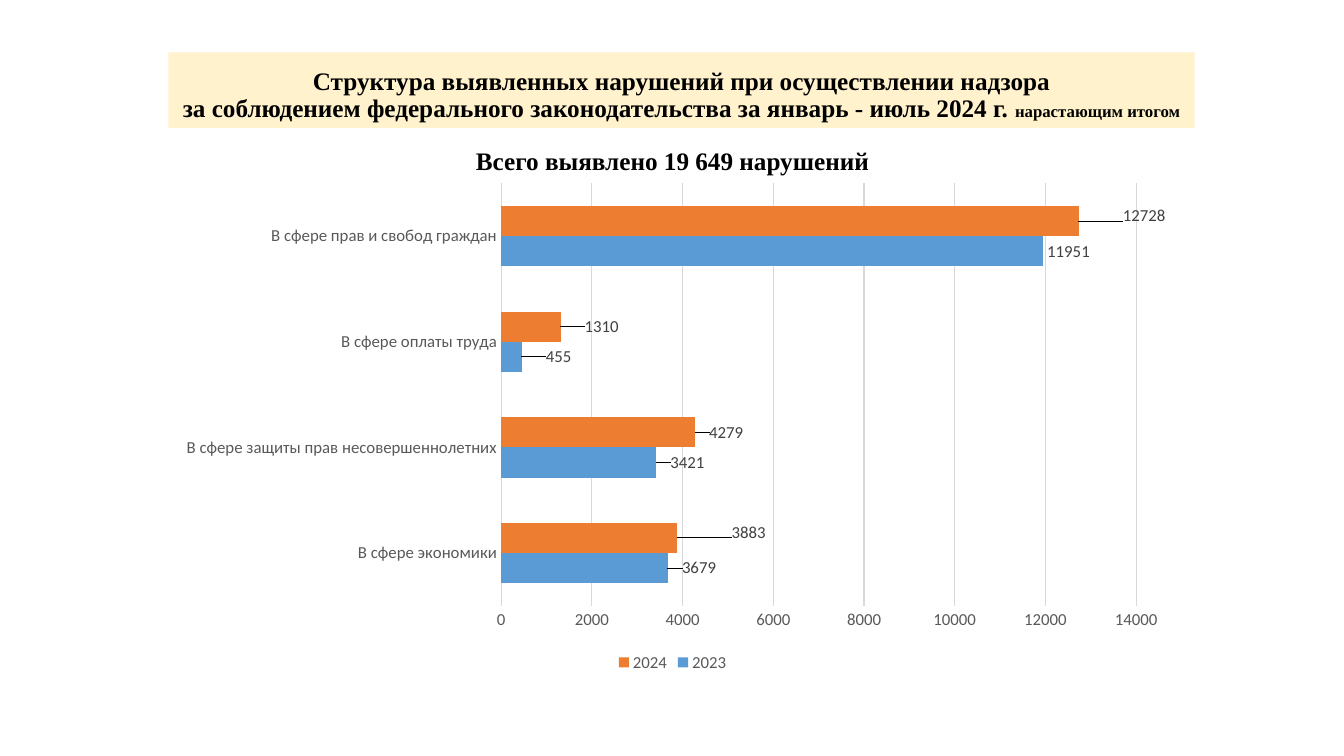
from dataclasses import dataclass

from lxml import etree
from pptx import Presentation
from pptx.chart.data import CategoryChartData
from pptx.dml.color import RGBColor
from pptx.enum.chart import (XL_CHART_TYPE, XL_LABEL_POSITION,
                             XL_LEGEND_POSITION, XL_TICK_MARK)
from pptx.enum.text import MSO_ANCHOR, PP_ALIGN
from pptx.oxml.ns import qn
from pptx.util import Inches, Pt

BARS = XL_CHART_TYPE.BAR_CLUSTERED
OUTSIDE_END = XL_LABEL_POSITION.OUTSIDE_END
LEGEND_BOTTOM = XL_LEGEND_POSITION.BOTTOM
NO_TICKS = XL_TICK_MARK.NONE
TOP, BOTTOM = MSO_ANCHOR.TOP, MSO_ANCHOR.BOTTOM
CENTER = PP_ALIGN.CENTER


@dataclass(frozen=True)
class Theme:
    heading_font: str = "Times New Roman"
    chart_font: str = "Calibri"
    heading_size: int = 18
    small_size: int = 12
    black: str = "000000"
    banner: str = "FFF2CC"
    axis: str = "595959"
    label: str = "404040"
    grid: str = "D9D9D9"
    blue: str = "5B9BD5"
    orange: str = "ED7D31"


THEME = Theme()

CATEGORIES = ["В сфере экономики", "В сфере защиты прав несовершеннолетних",
              "В сфере оплаты труда", "В сфере прав и свобод граждан"]
SERIES = [
    ("2023", THEME.blue, [3679, 3421, 455, 11951],
     [(0.01, 0), (0.01, 0), (0.02, 0), (0, 0)]),
    ("2024", THEME.orange, [3883, 4279, 1310, 12728],
     [(0.05, -0.01), (0.01, 0), (0.02, 0), (0.04, -0.01)]),
]


def style_font(font, name, size, color, bold=False):
    font.name = name
    font.size = Pt(size)
    font.bold = bold
    font.color.rgb = RGBColor.from_string(color)


def add_heading(page, area, spans, anchor, spacing, fill=None):
    box = page.shapes.add_textbox(*map(Inches, area))
    if fill:
        box.fill.solid()
        box.fill.fore_color.rgb = RGBColor.from_string(fill)
    frame = box.text_frame
    frame.word_wrap = True
    frame.vertical_anchor = anchor
    para = frame.paragraphs[0]
    para.alignment = CENTER
    para.line_spacing = spacing
    para.text = spans[0][0]
    for text, size in spans[1:]:
        para.add_run().text = text
    sizes = [spans[0][1]] * (len(para.runs) - len(spans) + 1)
    sizes += [size for text, size in spans[1:]]
    for span, size in zip(para.runs, sizes):
        style_font(span.font, THEME.heading_font, size, THEME.black, True)


def make_layout(**settings):
    layout = etree.Element(qn("c:layout"))
    manual = etree.SubElement(layout, qn("c:manualLayout"))
    for name, value in settings.items():
        etree.SubElement(manual, qn("c:" + name)).set("val", str(value))
    return layout


def style_axis(axis):
    axis.major_tick_mark = NO_TICKS
    axis.minor_tick_mark = NO_TICKS
    axis.format.line.fill.background()
    style_font(axis.tick_labels.font, THEME.chart_font, THEME.small_size,
               THEME.axis)


def style_series(series, color, offsets):
    series.format.fill.solid()
    series.format.fill.fore_color.rgb = RGBColor.from_string(color)
    labels = series.data_labels
    labels.show_value = True
    labels.position = OUTSIDE_END
    style_font(labels.font, THEME.chart_font, THEME.small_size, THEME.label)
    for index in range(len(offsets)):
        label = series.points[index].data_label
        label.position = OUTSIDE_END
        style_font(label.font, THEME.chart_font, THEME.small_size, THEME.label)
    for node, (x, y) in zip(series._element.iter(qn("c:dLbl")), offsets):
        node.insert(1, make_layout(x=x, y=y))


def add_violations_chart(page, area):
    data = CategoryChartData()
    data.categories = CATEGORIES
    for name, color, values, offsets in SERIES:
        data.add_series(name, values)
    chart = page.shapes.add_chart(BARS, *map(Inches, area), data).chart
    chart.has_title = False
    style_font(chart.font, THEME.chart_font, THEME.small_size, THEME.axis)

    chart.has_legend = True
    chart.legend.position = LEGEND_BOTTOM
    chart.legend.include_in_layout = False
    style_font(chart.legend.font, THEME.chart_font, THEME.small_size,
               THEME.axis)

    plot = chart.plots[0]
    plot.gap_width = 150
    plot.overlap = 0
    plot.vary_by_categories = False
    for series, (name, color, values, offsets) in zip(plot.series, SERIES):
        style_series(series, color, offsets)

    style_axis(chart.category_axis)
    axis = chart.value_axis
    style_axis(axis)
    axis.minimum_scale = 0
    axis.maximum_scale = 14000
    axis.major_unit = 2000
    axis.has_major_gridlines = True
    grid = axis.major_gridlines.format.line
    grid.width = Pt(0.75)
    grid.color.rgb = RGBColor.from_string(THEME.grid)

    plot_area = chart._chartSpace.find(".//" + qn("c:plotArea"))
    for old in plot_area.findall(qn("c:layout")):
        plot_area.remove(old)
    plot_area.insert(0, make_layout(layoutTarget="inner", xMode="edge",
                                    yMode="edge", x=0.33, y=0.02,
                                    w=0.63, h=0.84))


def main():
    deck = Presentation()
    deck.slide_width = Inches(13.33)
    deck.slide_height = Inches(7.5)
    page = deck.slides.add_slide(deck.slide_layouts[6])
    add_heading(page, (1.67, 0.52, 10.18, 0.75), [
        ("Структура выявленных нарушений при осуществлении надзора\v"
         "за соблюдением федерального законодательства "
         "за январь - июль 2024 г. ", THEME.heading_size),
        ("нарастающим итогом", THEME.small_size),
    ], BOTTOM, 0.9, THEME.banner)
    add_heading(page, (1.67, 1.45, 10, 0.36),
                [("Всего выявлено 19 649 нарушений", THEME.heading_size)],
                TOP, 0.8)
    add_violations_chart(page, (1.67, 1.72, 10, 4.99))
    deck.save("out.pptx")


if __name__ == "__main__":
    main()
